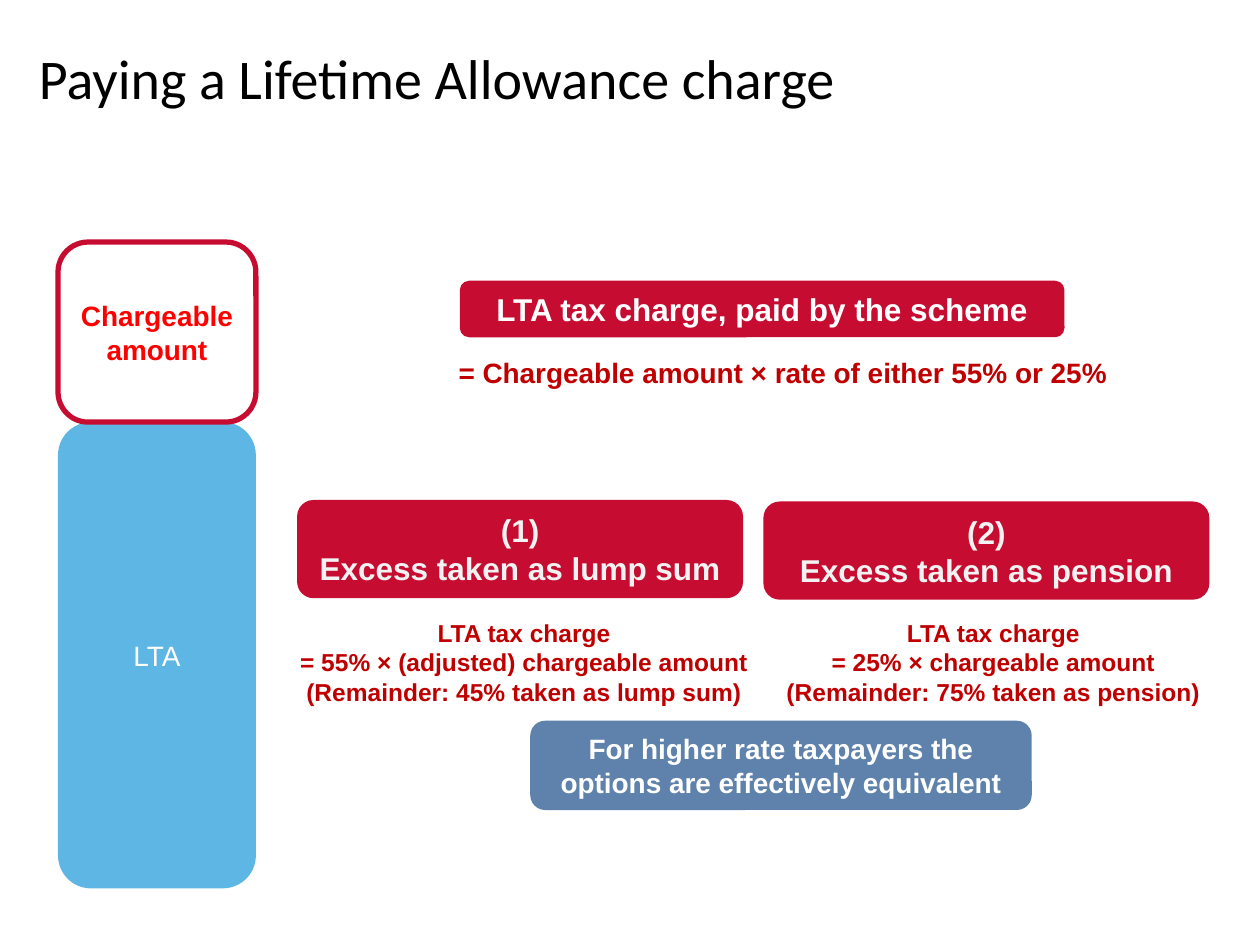
from dataclasses import dataclass

from pptx import Presentation
from pptx.dml.color import RGBColor
from pptx.enum.shapes import MSO_SHAPE
from pptx.enum.text import MSO_ANCHOR, MSO_AUTO_SIZE, PP_ALIGN
from pptx.util import Cm, Pt

ROUNDED = MSO_SHAPE.ROUNDED_RECTANGLE
LEFT, CENTER = PP_ALIGN.LEFT, PP_ALIGN.CENTER
TOP, MIDDLE = MSO_ANCHOR.TOP, MSO_ANCHOR.MIDDLE
FIXED, GROW = MSO_AUTO_SIZE.NONE, MSO_AUTO_SIZE.SHAPE_TO_FIT_TEXT
TITLE_ONLY = 5


@dataclass(frozen=True)
class Theme:
    title_font: str = "Calibri"
    body_font: str = "Arial"
    title_size: int = 32
    heading_size: int = 18
    body_size: int = 16
    detail_size: int = 14
    black: str = "000000"
    white: str = "FFFFFF"
    off_white: str = "F2F2F2"
    sky: str = "5EB6E5"
    slate: str = "5E82AB"
    crimson: str = "C60C30"
    dark_red: str = "C00000"
    red: str = "FF0000"


THEME = Theme()


def write(frame, text, *, size=THEME.body_size, color=THEME.white, bold=True,
          font=THEME.body_font, align=CENTER, anchor=MIDDLE, fit=GROW):
    """Fill a text frame; each line of text becomes a paragraph."""
    frame.word_wrap = True
    frame.auto_size = fit
    frame.vertical_anchor = anchor
    frame.text = text
    for paragraph in frame.paragraphs:
        paragraph.alignment = align
        for run in paragraph.runs:
            run.font.name = font
            run.font.size = Pt(size)
            run.font.bold = bold
            run.font.color.rgb = RGBColor.from_string(color)


class SlideBuilder:
    def __init__(self, presentation, theme):
        self.theme = theme
        self.slide = presentation.slides.add_slide(
            presentation.slide_layouts[TITLE_ONLY])

    def title(self, text, left, top, width, height):
        heading = self.slide.shapes.title
        heading.left, heading.top = Cm(left), Cm(top)
        heading.width, heading.height = Cm(width), Cm(height)
        write(heading.text_frame, text, size=self.theme.title_size,
              color=self.theme.black, bold=False, font=self.theme.title_font,
              align=LEFT, anchor=TOP, fit=FIXED)

    def box(self, text, left, top, width, height, fill=None, outline=None,
            **text_format):
        panel = self.slide.shapes.add_shape(
            ROUNDED, Cm(left), Cm(top), Cm(width), Cm(height))
        panel.shadow.inherit = False
        if fill:
            panel.fill.solid()
            panel.fill.fore_color.rgb = RGBColor.from_string(fill)
        else:
            panel.fill.background()
        if outline:
            panel.line.color.rgb = RGBColor.from_string(outline)
            panel.line.width = Pt(3)
        else:
            panel.line.fill.background()
        write(panel.text_frame, text, **text_format)

    def formula(self, text, left, top, width, height, **text_format):
        self.box(text, left, top, width, height, fill=self.theme.white,
                 color=self.theme.dark_red, **text_format)

    def heading(self, text, left, top, width, height, **text_format):
        self.box(text, left, top, width, height, fill=self.theme.crimson,
                 size=self.theme.heading_size, **text_format)


def main():
    presentation = Presentation()
    presentation.slide_width, presentation.slide_height = Cm(25.4), Cm(19.05)
    builder = SlideBuilder(presentation, THEME)
    builder.title("Paying a Lifetime Allowance charge", 0.53, 0.74, 22.86, 3.18)

    # The allowance column with the excess stacked on top
    column_left, column_width, allowance_top, excess_height = 1.17, 3.99, 8.51, 3.63
    builder.box("LTA", column_left, allowance_top, column_width, 9.4,
                fill=THEME.sky, bold=False, fit=FIXED)
    builder.box("Chargeable amount", column_left, allowance_top - excess_height,
                column_width, excess_height, outline=THEME.crimson,
                color=THEME.red, fit=FIXED)

    builder.heading("LTA tax charge, paid by the scheme", 9.27, 5.66, 12.19, 1.14)
    builder.formula("= Chargeable amount × rate of either 55% or 25%",
                    8.48, 6.99, 14.61, 1.04)

    # heading, its left and top; formula, its left and width
    options = [
        ("(1)\nExcess taken as lump sum", 5.99, 10.08,
         "LTA tax charge\n= 55% × (adjusted) chargeable amount\n"
         "(Remainder: 45% taken as lump sum)", 5.61, 9.91),
        ("(2)\nExcess taken as pension", 15.39, 10.11,
         "LTA tax charge\n= 25% × chargeable amount\n"
         "(Remainder: 75% taken as pension)", 15.44, 9.17),
    ]
    for heading, left, top, formula, formula_left, formula_width in options:
        builder.formula(formula, formula_left, 12.22, formula_width, 2.26,
                        size=THEME.detail_size)
        builder.heading(heading, left, top, 8.99, 1.98, color=THEME.off_white)

    builder.box("For higher rate taxpayers the options are effectively equivalent",
                10.69, 14.53, 10.11, 1.8, fill=THEME.slate)
    presentation.save("out.pptx")


if __name__ == "__main__":
    main()
